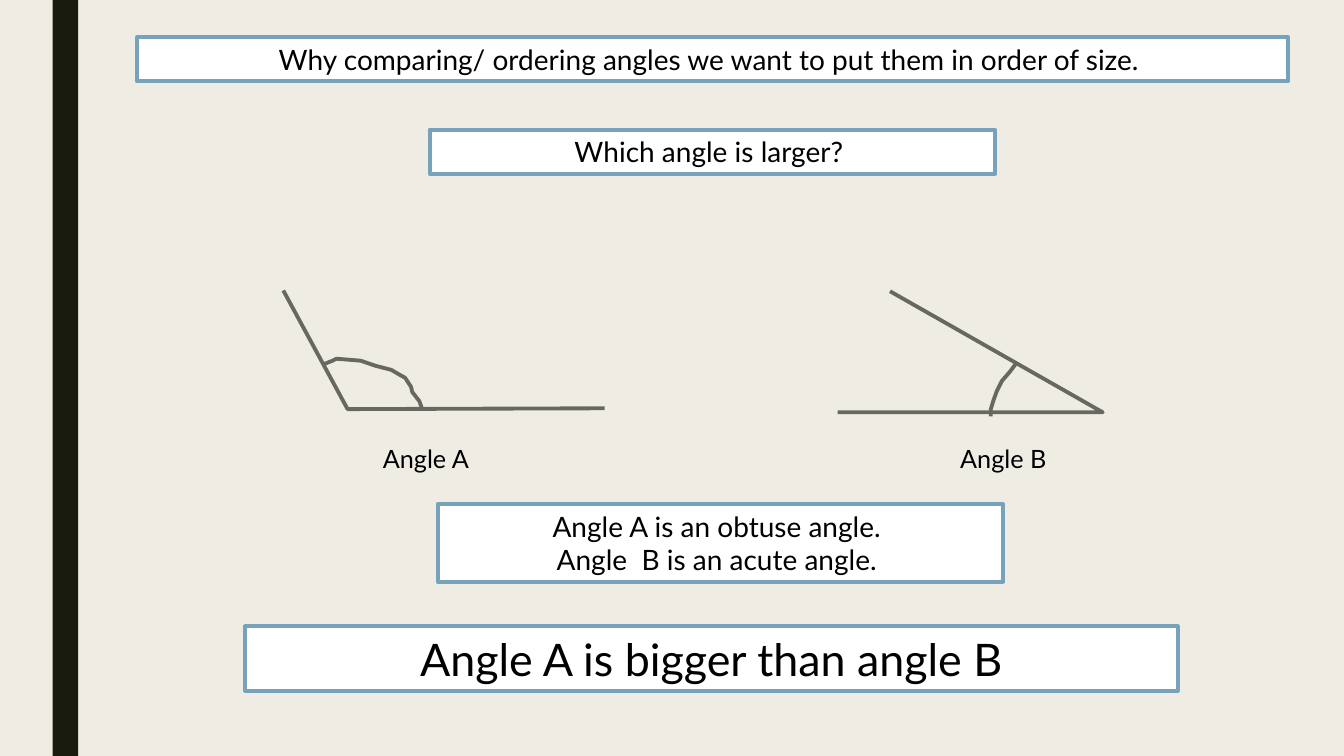
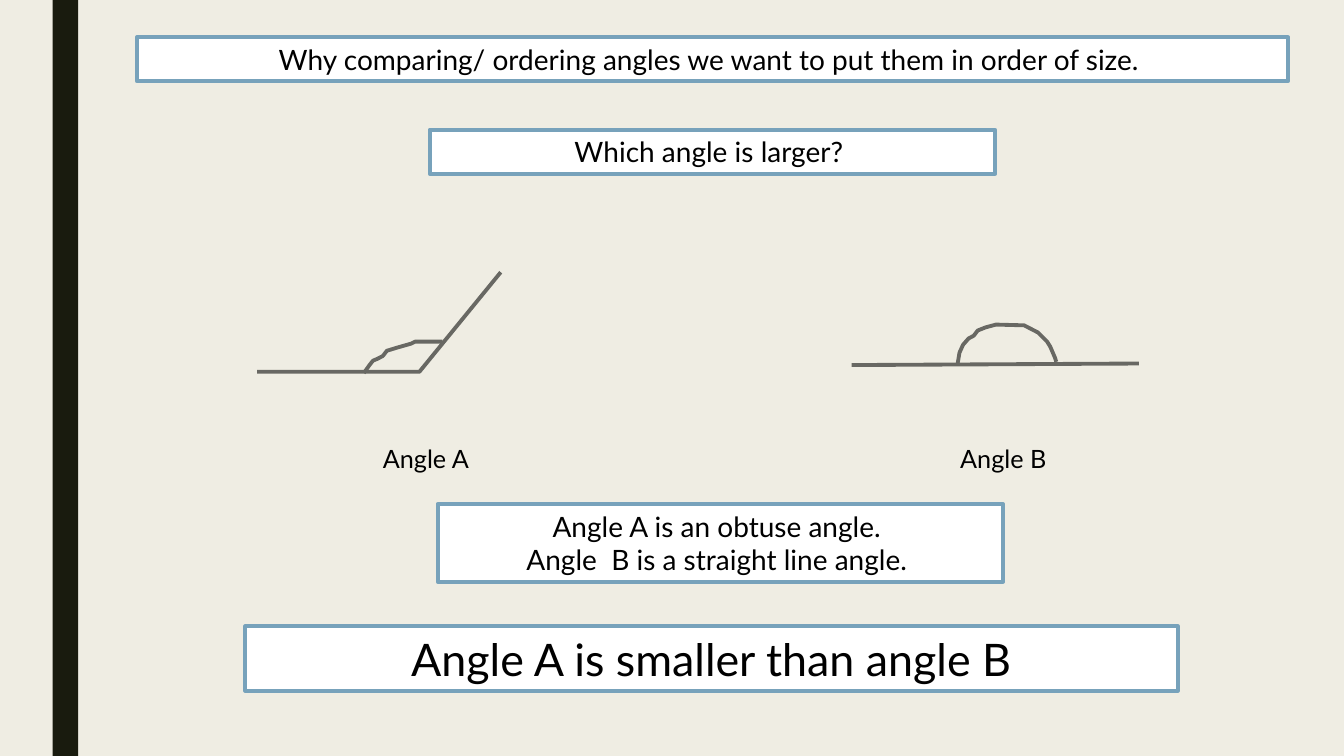
"""Build two slides that compare the sizes of a pair of angles."""
from lxml import etree
from pptx import Presentation
from pptx.dml.color import RGBColor
from pptx.enum import shapes, text
from pptx.oxml import ns
from pptx.util import Cm, Pt

BACKGROUND = RGBColor(0xEF, 0xED, 0xE3)
BAND = RGBColor(0x19, 0x1B, 0x0E)
BORDER = RGBColor(0x77, 0xA2, 0xBB)
STROKE = RGBColor(0x68, 0x68, 0x63)
WHITE = RGBColor(0xFF, 0xFF, 0xFF)
BLACK = RGBColor(0x00, 0x00, 0x00)
FONT = "Lato"
LINE_WIDTH = Pt(2.75)

OBTUSE_ARMS = [(7.14, 7.32), (8.76, 10.31), (15.24, 10.29)]
OBTUSE_ARC = [(8.18, 9.17), (8.38, 9.09), (8.48, 9.04), (9.09, 9.09),
              (9.47, 9.22), (9.86, 9.32), (10.08, 9.45), (10.21, 9.52),
              (10.36, 9.75), (10.39, 9.88), (10.57, 10.11), (10.64, 10.31)]
ACUTE_ARMS = [(21.11, 10.39), (27.79, 10.39), (22.43, 7.34)]
ACUTE_ARC = [(25.6, 9.17), (25.45, 9.37), (25.25, 9.6), (25.12, 9.86),
             (25.04, 10.08), (24.97, 10.31), (24.97, 10.49)]
WIDE_ARMS = [(6.48, 9.37), (10.57, 9.37), (12.62, 6.86)]
WIDE_ARC = [(9.17, 9.4), (9.32, 9.19), (9.4, 9.09), (9.52, 9.04),
            (9.65, 8.97), (9.75, 8.84), (10.01, 8.76), (10.36, 8.66),
            (10.46, 8.61), (11.15, 8.61)]
STRAIGHT_LINE = [(21.46, 9.2), (28.7, 9.16)]
STRAIGHT_ARC = [(24.13, 9.19), (24.18, 8.89), (24.27, 8.69), (24.41, 8.53),
                (24.54, 8.46), (24.64, 8.33), (24.84, 8.25), (25.1, 8.18),
                (25.81, 8.2), (26.16, 8.38), (26.39, 8.61), (26.47, 8.74),
                (26.59, 9.02), (26.62, 9.12)]


def write(shape, words, size, align):
    """Put words in a shape and format every run."""
    frame = shape.text_frame
    frame.word_wrap = True
    frame.text = words
    for para in frame.paragraphs:
        para.alignment = align
        for span in para.runs:
            span.font.name = FONT
            span.font.size = Pt(size)
            span.font.color.rgb = BLACK


def set_stroke(shape, color):
    """Give a shape or connector the common line width in a colour."""
    shape.line.color.rgb = color
    shape.line.width = LINE_WIDTH


def add_rectangle(page, left, top, width, height, color):
    """Add a filled rectangle with no line or shadow."""
    box = page.shapes.add_shape(shapes.MSO_SHAPE.RECTANGLE, Cm(left), Cm(top),
                                Cm(width), Cm(height))
    box.shadow.inherit = False
    box.fill.solid()
    box.fill.fore_color.rgb = color
    box.line.fill.background()
    return box


def add_statement(page, left, top, width, height, words, size=20):
    """Add a white bordered box with centred words."""
    box = add_rectangle(page, left, top, width, height, WHITE)
    set_stroke(box, BORDER)
    write(box, words, size, text.PP_ALIGN.CENTER)


def add_label(page, left, words):
    """Add the name below an angle."""
    box = page.shapes.add_textbox(Cm(left), Cm(11.05), Cm(3), Cm(1.02))
    write(box, words, 18, text.PP_ALIGN.LEFT)


def add_stroke(page, points):
    """Draw a line through two points, or an open outline through more."""
    places = [(Cm(x), Cm(y)) for x, y in points]
    if len(places) == 2:
        stroke = page.shapes.add_connector(shapes.MSO_CONNECTOR.STRAIGHT,
                                           *places[0], *places[1])
        set_stroke(stroke, STROKE)
        etree.SubElement(stroke._element.spPr, ns.qn("a:effectLst"))
        return
    builder = page.shapes.build_freeform(*places[0])
    builder.add_line_segments(places[1:], close=False)
    stroke = builder.convert_to_shape()
    stroke.shadow.inherit = False
    stroke.fill.background()
    set_stroke(stroke, STROKE)


def add_comparison(deck, strokes, kinds, verdict):
    """Add a page with two drawn angles, their kinds and the verdict."""
    page = deck.slides.add_slide(deck.slide_layouts[6])
    add_rectangle(page, 1.33, 0, 0.64, 19.05, BAND)
    add_statement(page, 3.45, 0.94, 29.01, 1.11,
                  "Why comparing/ ordering angles we want to put them in order of size. ")
    add_statement(page, 10.83, 3.27, 14.25, 1.11, "Which angle is larger? ")
    for points in strokes:
        add_stroke(page, points)
    add_label(page, 9.4, "Angle A")
    add_label(page, 23.95, "Angle B")
    add_statement(page, 11.03, 12.7, 14.25, 1.96, kinds)
    add_statement(page, 6.18, 15.78, 23.5, 1.63, verdict, 32)


def main():
    """Build and save the deck."""
    deck = Presentation()
    deck.slide_width, deck.slide_height = Cm(33.87), Cm(19.05)
    backdrop = deck.slide_master.background.fill
    backdrop.solid()
    backdrop.fore_color.rgb = BACKGROUND
    add_comparison(deck, [OBTUSE_ARMS, ACUTE_ARMS, OBTUSE_ARC, ACUTE_ARC],
                   "Angle A is an obtuse angle. \nAngle  B is an acute angle. ",
                   "Angle A is bigger than angle B")
    add_comparison(deck, [STRAIGHT_LINE, WIDE_ARMS, WIDE_ARC, STRAIGHT_ARC],
                   "Angle A is an obtuse angle. \nAngle  B is a straight line angle. ",
                   "Angle A is smaller than angle B")
    deck.save("out.pptx")


if __name__ == "__main__":
    main()
